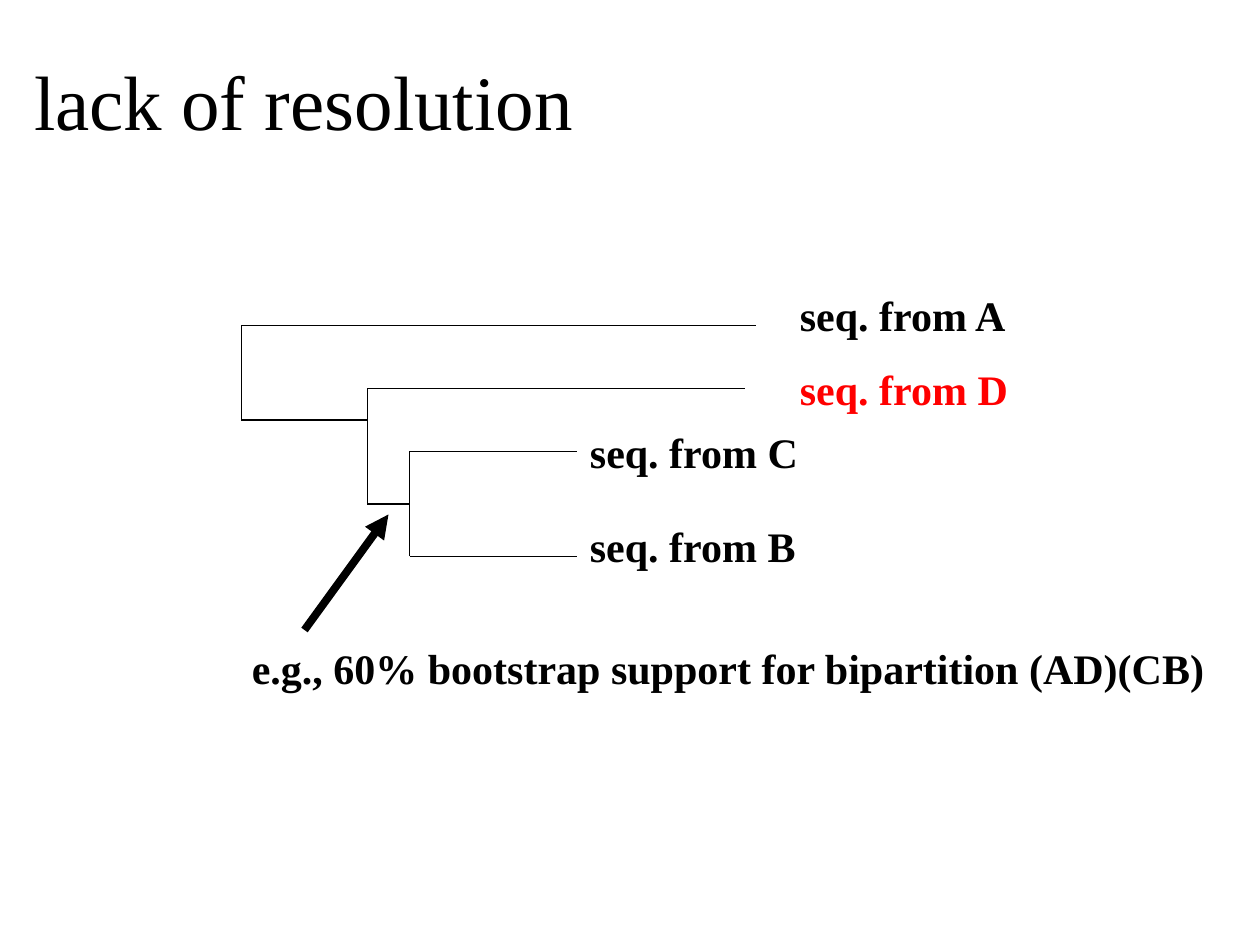
from lxml import etree
from pptx import Presentation
from pptx.dml.color import RGBColor
from pptx.enum.shapes import MSO_CONNECTOR
from pptx.enum.text import MSO_ANCHOR, MSO_AUTO_SIZE, PP_ALIGN
from pptx.oxml.ns import qn
from pptx.util import Inches, Pt

STRAIGHT = MSO_CONNECTOR.STRAIGHT
MIDDLE = MSO_ANCHOR.MIDDLE
FIT_SHAPE = MSO_AUTO_SIZE.SHAPE_TO_FIT_TEXT
NO_FIT = MSO_AUTO_SIZE.NONE
LEFT = PP_ALIGN.LEFT

BLACK = RGBColor(0, 0, 0)
RED = RGBColor(255, 0, 0)
FONT = "Times New Roman"
UNITS_PER_INCH = 12

ROOT, INNER, TIP_PAIR = 23, 35, 39
CLADES = [
    (ROOT, 31, 40, 72, INNER),
    (INNER, 37, 48, 71, TIP_PAIR),
    (TIP_PAIR, 43, 53, 55, 55),
]
LABELS = [
    ("seq. from A", 75, 27, 22.7, BLACK),
    ("seq. from D", 75, 34, 22.9, RED),
    ("seq. from C", 55, 40, 22.9, BLACK),
    ("seq. from B", 55, 49, 23, BLACK),
    ("e.g., 60% bootstrap support for bipartition (AD)(CB)", 22.8, 60.6, 94.1, BLACK),
]


def grid(units):
    return Inches(units / UNITS_PER_INCH)


def format_text(paragraph, size, color, bold):
    paragraph.alignment = LEFT
    font = paragraph.font
    for name, value in {"name": FONT, "size": Pt(size), "bold": bold}.items():
        setattr(font, name, value)
    font.color.rgb = color


def add_title(slide, text):
    title = slide.shapes.title
    box = {"left": 0.17, "top": 0.17, "width": 8.5, "height": 1.25}
    for name, value in box.items():
        setattr(title, name, Inches(value))
    frame = title.text_frame
    frame.text = text
    frame.vertical_anchor = MIDDLE
    frame.auto_size = NO_FIT
    format_text(frame.paragraphs[0], 44, BLACK, False)


def add_line(slide, start, end, width=0.75):
    line = slide.shapes.add_connector(STRAIGHT, *map(grid, start + end))
    line.line.color.rgb = BLACK
    line.line.width = Pt(width)
    etree.SubElement(line.element.spPr, qn("a:effectLst"))
    return line


def add_arrow(slide, start, end):
    arrow = add_line(slide, start, end, 4.5)
    outline = arrow.line._get_or_add_ln()
    etree.SubElement(outline, qn("a:tailEnd"), type="triangle")


def add_clade(slide, stem, upper, lower, upper_end, lower_end):
    add_line(slide, (stem, upper), (stem, lower))
    add_line(slide, (stem, upper), (upper_end, upper))
    add_line(slide, (stem, lower), (lower_end, lower))


def add_label(slide, text, column, row, width, color):
    label = slide.shapes.add_textbox(grid(column), grid(row), grid(width), grid(6))
    frame = label.text_frame
    frame.text = text
    frame.word_wrap = False
    frame.auto_size = FIT_SHAPE
    format_text(frame.paragraphs[0], 24, color, True)


def main():
    presentation = Presentation()
    presentation.slide_width = Inches(10)
    presentation.slide_height = Inches(7.5)
    slide = presentation.slides.add_slide(presentation.slide_layouts[5])
    add_title(slide, "lack of resolution")
    for clade in CLADES:
        add_clade(slide, *clade)
    add_arrow(slide, (29, 60), (37, 49))
    for label in LABELS:
        add_label(slide, *label)
    presentation.save("out.pptx")


if __name__ == "__main__":
    main()
